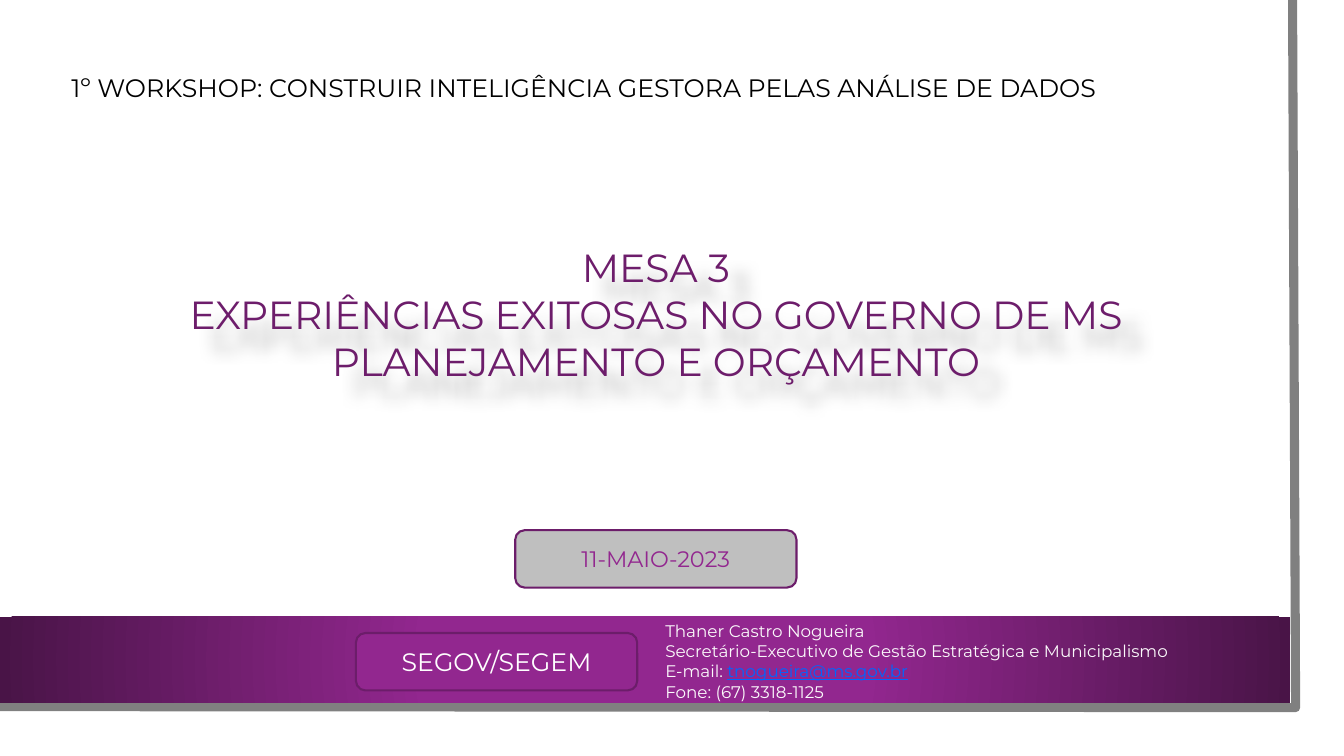
from pptx import Presentation
from pptx.dml.color import RGBColor
from pptx.enum.shapes import MSO_SHAPE
from pptx.enum.text import MSO_ANCHOR, PP_ALIGN
from pptx.oxml import parse_xml
from pptx.oxml.ns import nsdecls
from pptx.util import Inches, Pt

RECT, ROUNDED = MSO_SHAPE.RECTANGLE, MSO_SHAPE.ROUNDED_RECTANGLE
LEFT, CENTER = PP_ALIGN.LEFT, PP_ALIGN.CENTER
TOP, MIDDLE = MSO_ANCHOR.TOP, MSO_ANCHOR.MIDDLE

FONT = "Montserrat"
WHITE = RGBColor(0xFF, 0xFF, 0xFF)
BLACK = RGBColor(0x00, 0x00, 0x00)
GRAY = RGBColor(0x80, 0x80, 0x80)
SILVER = RGBColor(0xBF, 0xBF, 0xBF)
PURPLE = RGBColor(0x92, 0x27, 0x8F)
DARK_PURPLE = RGBColor(0x49, 0x14, 0x47)
TITLE_PURPLE = RGBColor(0x6D, 0x1D, 0x6B)
BORDER_PURPLE = RGBColor(0x6C, 0x1D, 0x6A)
OFF_WHITE = RGBColor(0xFB, 0xFA, 0xFB)
LINK_BLUE = RGBColor(0x00, 0x66, 0xFF)

BADGE_SIZE = (2.79, 0.57)


def write_text(tf, lines, size, color, align=LEFT, anchor=TOP):
    """Fill a frame; each line is a list of (text, font overrides) runs."""
    tf.word_wrap = True
    tf.vertical_anchor = anchor
    for i, line in enumerate(lines):
        p = tf.paragraphs[0] if i == 0 else tf.add_paragraph()
        p.alignment = align
        for text, changes in line:
            r = p.add_run()
            r.text = text
            look = {"name": FONT, "size": Pt(size), "color": color, **changes}
            r.font.color.rgb = look.pop("color")
            for key, value in look.items():
                setattr(r.font, key, value)


def plain(*lines):
    return [[(line, {})] for line in lines]


def add_box(s, kind, box, fill, border=None):
    sp = s.shapes.add_shape(kind, *map(Inches, box))
    sp.shadow.inherit = False
    sp.fill.solid()
    sp.fill.fore_color.rgb = fill
    if border is None:
        sp.line.fill.background()
    else:
        sp.line.color.rgb = border
        sp.line.width = Pt(1.5)
    return sp


def add_backdrop(s, box):
    """White page with a gray edge along its right and bottom sides."""
    x, y, w, h = box
    add_box(s, RECT, box, WHITE)
    builder = s.shapes.build_freeform(Inches(x + w - 0.28), Inches(y), scale=1)
    builder.add_line_segments(
        [(Inches(x + w - 0.25), Inches(y + h - 0.25)),
         (Inches(x - 0.03), Inches(y + h - 0.26))], close=False)
    edge = builder.convert_to_shape()
    edge.shadow.inherit = False
    edge.fill.background()
    edge.line.color.rgb = GRAY
    edge.line.width = Pt(6.5)


def add_band(s, box):
    """Footer band, bright in the middle and dark at the ends."""
    band = add_box(s, RECT, box, PURPLE)
    gradient = parse_xml(
        f'<a:gradFill {nsdecls("a")} rotWithShape="1"><a:gsLst>'
        f'<a:gs pos="34000"><a:srgbClr val="{PURPLE}"/></a:gs>'
        f'<a:gs pos="100000"><a:srgbClr val="{DARK_PURPLE}"/></a:gs></a:gsLst>'
        '<a:path path="circle"><a:fillToRect l="50000" t="50000" r="50000" b="50000"/>'
        '</a:path></a:gradFill>')
    solid = band.element.spPr.find("{*}solidFill")
    solid.getparent().replace(solid, gradient)


def add_text(s, box, lines, size, color):
    tb = s.shapes.add_textbox(*map(Inches, box))
    write_text(tb.text_frame, lines, size, color)


def add_title(s, box, lines):
    """Title placeholder, brought above the backdrop, with a soft shadow."""
    title = s.shapes.title
    title.left, title.top, title.width, title.height = map(Inches, box)
    title.element.getparent().append(title.element)
    write_text(title.text_frame, plain(*lines), 28, TITLE_PURPLE, CENTER)
    title.fill.background()
    title.element.spPr.append(parse_xml(
        f'<a:effectLst {nsdecls("a")}><a:outerShdw blurRad="{Inches(0.15)}" '
        f'dist="{Inches(0.28)}" dir="2700000" algn="tl" rotWithShape="0">'
        f'<a:srgbClr val="{BLACK}"><a:alpha val="30000"/></a:srgbClr>'
        '</a:outerShdw></a:effectLst>'))


def add_badge(s, x, y, text, size, color, fill):
    sp = add_box(s, ROUNDED, (x, y, *BADGE_SIZE), fill, BORDER_PURPLE)
    write_text(sp.text_frame, plain(text), size, color, CENTER, MIDDLE)


def add_footer(s, box):
    """Band with the department badge and the speaker's contact details."""
    x, y, w, h = box
    add_band(s, box)
    contact = plain("Thaner Castro Nogueira",
                    "Secretário-Executivo de Gestão Estratégica e Municipalismo")
    contact.append([("E-mail: ", {}),
                    ("tnogueira@ms.gov.br", {"color": LINK_BLUE, "underline": True})])
    contact += plain("Fone: (67) 3318-1125")
    add_text(s, (x + 6.5, y - 0.01, 5.8, 0.91), contact, 12, OFF_WHITE)
    add_badge(s, x + 3.53, y + 0.16, "SEGOV/SEGEM", 18, WHITE, PURPLE)


def build_cover(prs):
    s = prs.slides.add_slide(prs.slide_layouts[5])
    add_backdrop(s, (0, 0, 13.1, 7.27))
    add_footer(s, (0, 6.12, 12.8, 0.85))
    add_text(s, (0.61, 0.67, 11.44, 0.4),
             plain("1º WORKSHOP: CONSTRUIR INTELIGÊNCIA GESTORA PELAS ANÁLISE DE DADOS"),
             18, BLACK)
    add_title(s, (1.29, 2.36, 10.43, 1.51),
              ["MESA 3", "EXPERIÊNCIAS EXITOSAS NO GOVERNO DE MS",
               "PLANEJAMENTO E ORÇAMENTO"])
    add_badge(s, 5.11, 5.26, "11-MAIO-2023", 16, PURPLE, SILVER)


def main():
    prs = Presentation()
    prs.slide_width, prs.slide_height = Inches(13.33), Inches(7.5)
    build_cover(prs)
    prs.save("out.pptx")


if __name__ == "__main__":
    main()
